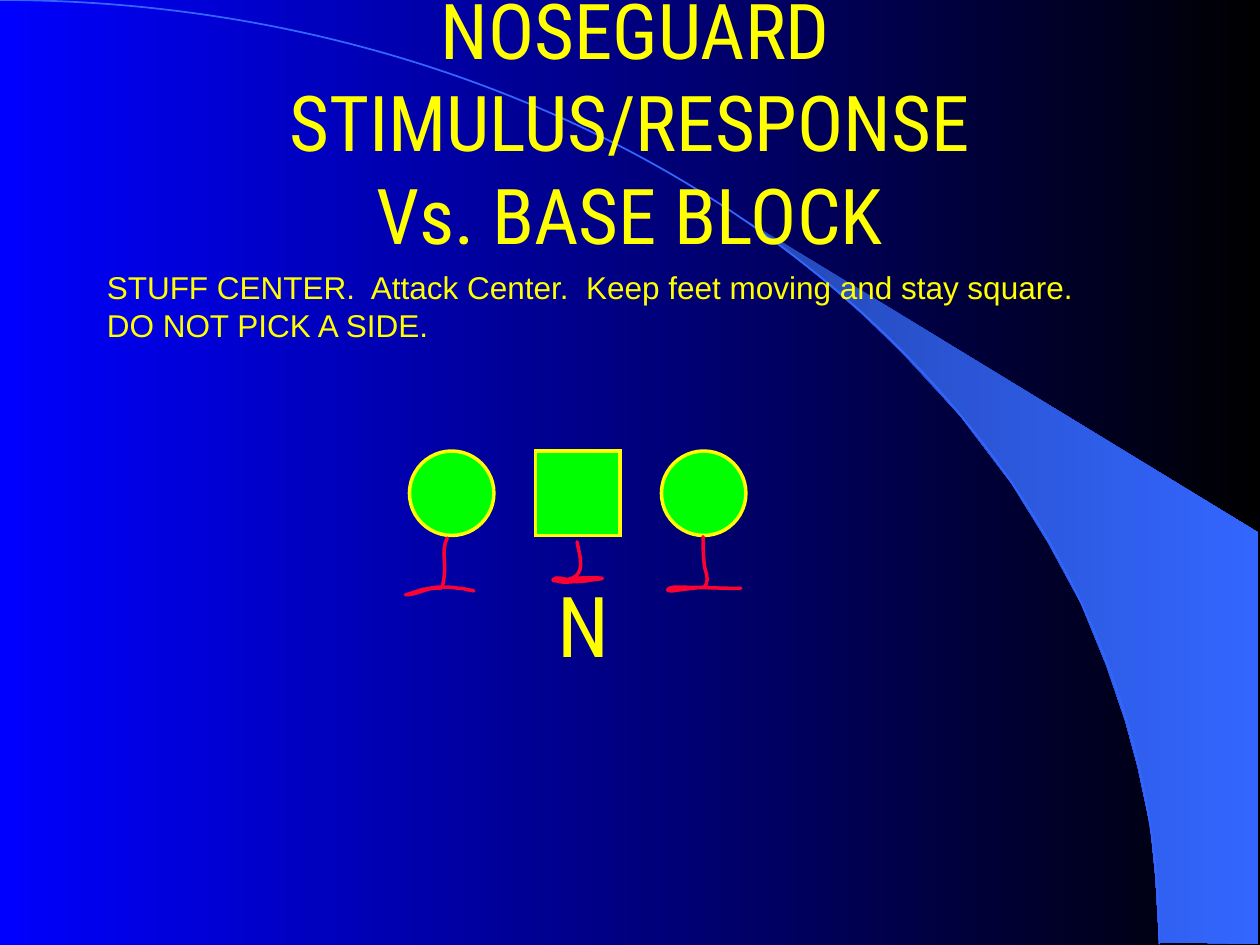
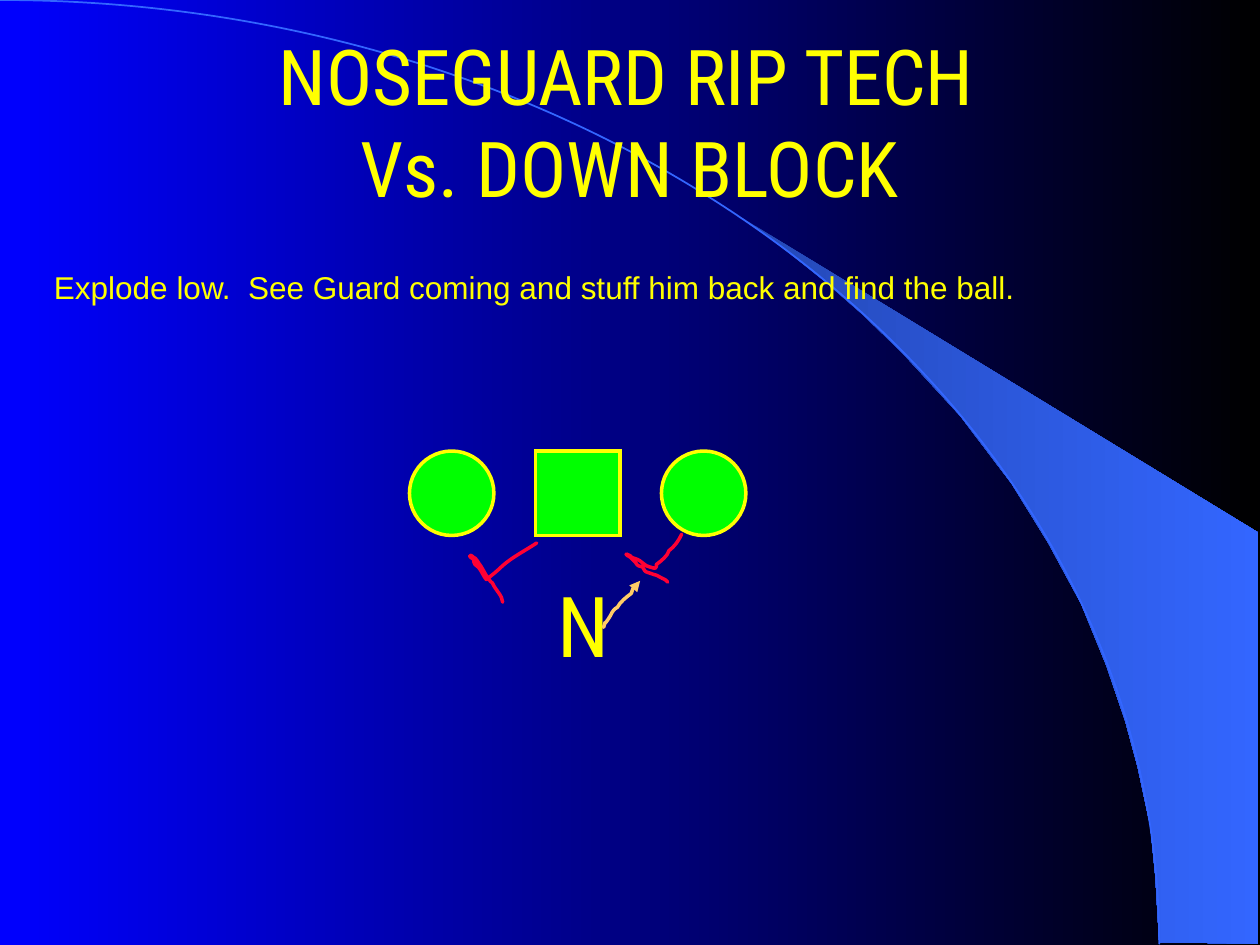
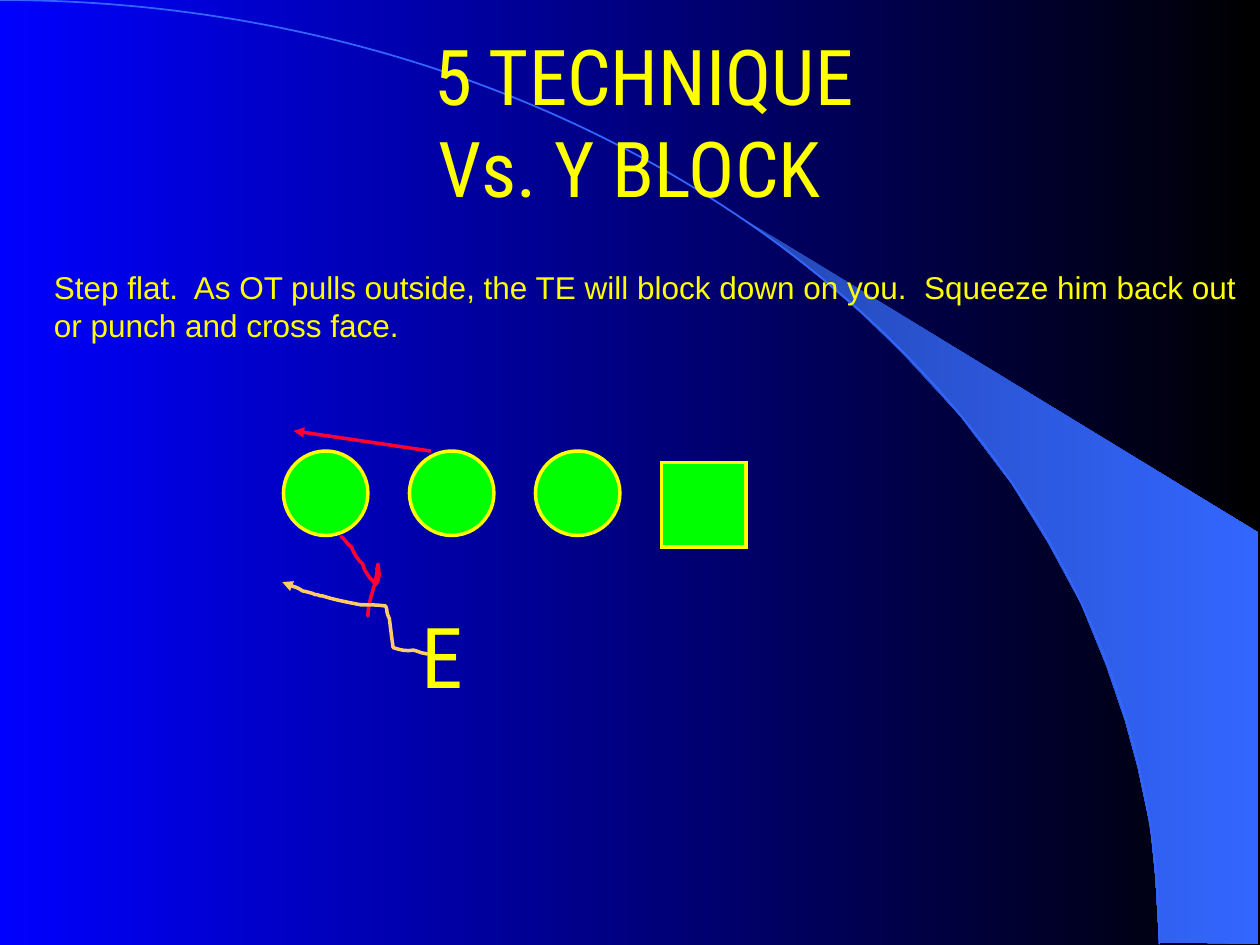
from lxml.etree import SubElement
from pptx import Presentation
from pptx.dml.color import RGBColor as RGB
from pptx.enum.shapes import MSO_CONNECTOR, MSO_SHAPE
from pptx.enum.text import MSO_ANCHOR, MSO_AUTO_SIZE as AUTO, PP_ALIGN
from pptx.oxml.ns import qn
from pptx.util import Inches, Pt

BLUE = RGB(0x00, 0x00, 0xFF)
BLACK = RGB(0x00, 0x00, 0x00)
SWEEP_BLUE = RGB(0x33, 0x66, 0xFF)
YELLOW = RGB(0xFF, 0xFF, 0x00)
GREEN = RGB(0x00, 0xFF, 0x00)
RED = RGB(0xFF, 0x00, 0x33)
ORANGE = RGB(0xFF, 0xCC, 0x66)

HEAD_FONT = "Roboto Condensed"
BODY_FONT = "Arial"
WIDTH, HEIGHT = 10, 7.5
MARGIN = 0.25
PLAYER = 0.67
LINE_ROW = 3.58
NOTE_ROW = 2.08

SWEEP = [(9.2, 7.48), (9.99, 7.49), (9.99, 4.23), (5.89, 1.73), (6.24, 1.99), (6.53, 2.22),
         (6.85, 2.5), (7.16, 2.8), (7.62, 3.3), (8.03, 3.84), (8.32, 4.31), (8.58, 4.79),
         (8.78, 5.28), (8.93, 5.72), (9.03, 6.09), (9.13, 6.56), (9.17, 6.96), (9.2, 7.48)]
ARC = [(0, 0), (5.08, 0, 9.2, 3.35, 9.2, 7.49)]

CENTER_BASE = [
    (4.58, 4.3), (4.6, 4.42, 4.66, 4.56, 4.51, 4.6), (4.48, 4.6, 4.41, 4.57, 4.39, 4.6),
    (4.38, 4.61, 4.41, 4.61, 4.42, 4.61), (4.45, 4.62, 4.47, 4.62, 4.5, 4.62),
    (4.63, 4.61, 4.61, 4.62, 4.71, 4.6), (4.73, 4.6, 4.8, 4.59, 4.78, 4.59),
    (4.69, 4.58, 4.61, 4.59, 4.52, 4.59)]
LEFT_GUARD_BASE = [
    (3.55, 4.27), (3.49, 4.4, 3.56, 4.46, 3.51, 4.66), (3.5, 4.68, 3.46, 4.66, 3.43, 4.67),
    (3.36, 4.68, 3.3, 4.72, 3.22, 4.72), (3.21, 4.72, 3.24, 4.72, 3.26, 4.71),
    (3.27, 4.71, 3.28, 4.7, 3.29, 4.7), (3.3, 4.7, 3.31, 4.69, 3.32, 4.69),
    (3.37, 4.67, 3.35, 4.68, 3.41, 4.67), (3.44, 4.66, 3.48, 4.66, 3.51, 4.66),
    (3.56, 4.66, 3.6, 4.66, 3.64, 4.67), (3.67, 4.67, 3.69, 4.67, 3.71, 4.68),
    (3.73, 4.68, 3.76, 4.69, 3.76, 4.69)]
RIGHT_GUARD_BASE = [
    (5.58, 4.26), (5.58, 4.33, 5.58, 4.4, 5.59, 4.48), (5.59, 4.53, 5.64, 4.6, 5.59, 4.66),
    (5.58, 4.66, 5.4, 4.68, 5.34, 4.69), (5.33, 4.69, 5.29, 4.69, 5.3, 4.68),
    (5.31, 4.66, 5.37, 4.66, 5.37, 4.66), (5.87, 4.67, 5.7, 4.67, 5.88, 4.67)]
GUARD_DOWN = [
    (5.41, 4.24), (5.38, 4.3, 5.36, 4.33, 5.31, 4.37), (5.3, 4.41, 5.25, 4.45, 5.21, 4.48),
    (5.21, 4.49, 5.21, 4.51, 5.2, 4.51), (5.18, 4.51, 5.13, 4.49, 5.13, 4.49),
    (5.06, 4.44, 5.09, 4.45, 5.03, 4.43), (5.02, 4.43, 5.01, 4.42, 5, 4.41),
    (4.99, 4.41, 4.97, 4.39, 4.97, 4.4), (4.97, 4.41, 4.99, 4.41, 5, 4.42),
    (5.09, 4.5, 5.03, 4.48, 5.1, 4.5), (5.13, 4.55, 5.11, 4.53, 5.19, 4.56),
    (5.2, 4.56, 5.22, 4.57, 5.22, 4.57), (5.29, 4.61, 5.27, 4.59, 5.3, 4.62)]
CENTER_DOWN = [
    (4.26, 4.31), (4.17, 4.37, 4.07, 4.42, 3.99, 4.49), (3.95, 4.53, 3.9, 4.57, 3.86, 4.6),
    (3.82, 4.55, 3.82, 4.51, 3.77, 4.48), (3.76, 4.47, 3.76, 4.45, 3.76, 4.44),
    (3.75, 4.43, 3.72, 4.42, 3.73, 4.41), (3.74, 4.4, 3.76, 4.43, 3.77, 4.43),
    (3.78, 4.44, 3.79, 4.45, 3.8, 4.47), (3.84, 4.52, 3.86, 4.59, 3.91, 4.63),
    (3.93, 4.68, 3.99, 4.73, 3.99, 4.78)]
NOSE_RIP = [
    (4.79, 4.98), (4.82, 4.89, 4.77, 5, 4.83, 4.91), (4.86, 4.87, 4.85, 4.85, 4.9, 4.82),
    (4.92, 4.78, 4.97, 4.74, 5.01, 4.71), (5.03, 4.65, 5.01, 4.7, 5.06, 4.64),
    (5.06, 4.63, 5.08, 4.61, 5.08, 4.61)]
TIGHT_END_DOWN = [
    (2.71, 4.26), (2.75, 4.29, 2.75, 4.32, 2.79, 4.34), (2.81, 4.4, 2.84, 4.44, 2.88, 4.48),
    (2.9, 4.54, 2.88, 4.5, 2.93, 4.58), (2.95, 4.6, 2.98, 4.64, 2.98, 4.64),
    (3.02, 4.59, 3.01, 4.54, 3, 4.48), (2.97, 4.61, 3.02, 4.4, 2.98, 4.61),
    (2.96, 4.7, 2.92, 4.79, 2.92, 4.89)]
END_CROSS_FACE = [
    (3.39, 5.19), (3.37, 5.19, 3.36, 5.18, 3.34, 5.18), (3.32, 5.17, 3.28, 5.16, 3.28, 5.16),
    (3.22, 5.17, 3.18, 5.16, 3.12, 5.14), (3.11, 5.07, 3.1, 4.99, 3.09, 4.91),
    (3.08, 4.89, 3.07, 4.87, 3.07, 4.84), (3.06, 4.83, 3.07, 4.81, 3.06, 4.81),
    (2.99, 4.8, 2.92, 4.8, 2.86, 4.8), (2.76, 4.78, 2.65, 4.76, 2.56, 4.73),
    (2.55, 4.73, 2.53, 4.73, 2.52, 4.72), (2.51, 4.72, 2.49, 4.72, 2.48, 4.71),
    (2.45, 4.7, 2.4, 4.69, 2.4, 4.69), (2.36, 4.66, 2.33, 4.66, 2.29, 4.64),
    (2.24, 4.62, 2.27, 4.62, 2.24, 4.62)]


def column(n):
    return MARGIN + n


def write(p, text, font=HEAD_FONT, size=44, color=YELLOW):
    for i, line in enumerate(text.split("\n")):
        if i:
            p.add_line_break()
        r = p.add_run()
        r.text = line
        r.font.name, r.font.size, r.font.color.rgb = font, Pt(size), color


def gradient(fill, start, end):
    fill.gradient()
    fill.gradient_angle = 0
    for stop, color in zip(fill.gradient_stops, (start, end)):
        stop.color.rgb = color


def outline(shape, color, width=2, arrow=False):
    shape.line.color.rgb = color
    shape.line.width = Pt(width)
    ln = shape.element.spPr.find(qn("a:ln"))
    if arrow:
        SubElement(ln, qn("a:tailEnd"), type="triangle")
    return ln


def freeform(slide, points, close=False):
    emu = [(Inches(x), Inches(y)) for x, y in points]
    builder = slide.shapes.build_freeform(*emu[0])
    builder.add_line_segments(emu[1:], close=close)
    sp = builder.convert_to_shape()
    sp.shadow.inherit = False
    return sp


def bend(sp, segments):
    lines = list(sp.element.spPr.iter(qn("a:lnTo")))
    for line, segment in zip(lines, segments):
        line.tag = qn("a:cubicBezTo")
        line.clear()
        for x, y in zip(segment[::2], segment[1::2]):
            SubElement(line, qn("a:pt"), x=str(Inches(x) - sp.left), y=str(Inches(y) - sp.top))


def stroke(slide, curve, color=RED, width=2, arrow=False):
    sp = freeform(slide, [segment[-2:] for segment in curve])
    bend(sp, curve[1:])
    sp.fill.background()
    outline(sp, color, width, arrow).set("cap", "rnd")
    return sp


def run_arrow(slide, start, end):
    line = slide.shapes.add_connector(MSO_CONNECTOR.STRAIGHT, *map(Inches, start + end))
    outline(line, RED, arrow=True)
    SubElement(line.element.spPr, qn("a:effectLst"))


def player(slide, n, kind=MSO_SHAPE.OVAL, top=LINE_ROW):
    sp = slide.shapes.add_shape(kind, *map(Inches, (column(n), top, PLAYER, PLAYER)))
    sp.shadow.inherit = False
    sp.fill.solid()
    sp.fill.fore_color.rgb = GREEN
    SubElement(outline(sp, YELLOW), qn("a:miter"), lim="800000")


def text_box(slide, lines, left, top, width, height, wrap=False, **style):
    tf = slide.shapes.add_textbox(*map(Inches, (left, top, width, height))).text_frame
    tf.word_wrap = wrap
    tf.auto_size = AUTO.SHAPE_TO_FIT_TEXT
    for i, line in enumerate(lines):
        write(tf.add_paragraph() if i else tf.paragraphs[0], line, **style)


def note(slide, lines, left, width, wrap=False):
    text_box(slide, lines, left, NOTE_ROW, width, 0.1 + 0.3 * len(lines), wrap,
             font=BODY_FONT, size=18)


def defender(slide, letter, left, top, width):
    text_box(slide, [letter], left, top, width, 0.9, size=48)


def play_slide(prs, title):
    slide = prs.slides.add_slide(prs.slide_layouts[5])
    tf = slide.shapes.title.text_frame
    tf.vertical_anchor = MSO_ANCHOR.MIDDLE
    tf.auto_size = AUTO.NONE
    tf.word_wrap = True
    p = tf.paragraphs[0]
    p.alignment = PP_ALIGN.CENTER
    write(p, " ", size=28)
    write(p, title)
    return slide


def nose_slide(prs, title):
    slide = play_slide(prs, title)
    player(slide, 4, MSO_SHAPE.RECTANGLE)
    for n in (3, 5):
        player(slide, n)
    defender(slide, "N", 4.33, 4.5, 0.56)
    return slide


def set_up_template(prs):
    prs.slide_width, prs.slide_height = Inches(WIDTH), Inches(HEIGHT)
    gradient(prs.slide_master.background.fill, BLUE, BLACK)
    title = prs.slide_layouts[5].placeholders[0]
    title.left, title.top, title.width, title.height = map(Inches, (0.75, 0, 8.5, 1.92))


def decorate_master(prs, slide):
    sweep = freeform(slide, SWEEP, close=True)
    gradient(sweep.fill, SWEEP_BLUE, SWEEP_BLUE)
    dark_end = next(sweep.element.spPr.iter(qn("a:srgbClr")))
    SubElement(dark_end, qn("a:shade"), val="46000")
    sweep.line.fill.background()
    arc = stroke(slide, ARC, SWEEP_BLUE, width=1)
    for number, sp in enumerate((sweep, arc), 100):
        sp.element.nvSpPr.cNvPr.set("id", str(number))
        prs.slide_master.element.cSld.spTree.append(sp.element)


def main():
    prs = Presentation()
    set_up_template(prs)

    base = nose_slide(prs, "NOSEGUARD STIMULUS/RESPONSE\nVs. BASE BLOCK")
    decorate_master(prs, base)
    note(base, ["STUFF CENTER.  Attack Center.  Keep feet moving and stay square.",
                "DO NOT PICK A SIDE."], 0.75, 8.03)
    for block in (CENTER_BASE, LEFT_GUARD_BASE, RIGHT_GUARD_BASE):
        stroke(base, block)

    down = nose_slide(prs, "NOSEGUARD RIP TECH \nVs. DOWN BLOCK")
    note(down, ["Explode low.  See Guard coming and stuff him back and find the ball."],
         0.33, 9.25, wrap=True)
    for block in (GUARD_DOWN, CENTER_DOWN):
        stroke(down, block)
    stroke(down, NOSE_RIP, ORANGE, arrow=True)

    y_block = play_slide(prs, " 5 TECHNIQUE\nVs. Y BLOCK")
    note(y_block, ["Step flat.  As OT pulls outside, the TE will block down on you.  "
                   "Squeeze him back out", "or punch and cross face."], 0.33, 9.6)
    player(y_block, 5, MSO_SHAPE.RECTANGLE, top=3.67)
    for n in (3, 4):
        player(y_block, n)
    defender(y_block, "E", 3.25, 4.75, 0.48)
    player(y_block, 2)
    stroke(y_block, TIGHT_END_DOWN)
    run_arrow(y_block, (3.42, 3.58), (2.33, 3.42))
    stroke(y_block, END_CROSS_FACE, ORANGE, arrow=True)

    prs.save("out.pptx")


if __name__ == "__main__":
    main()
